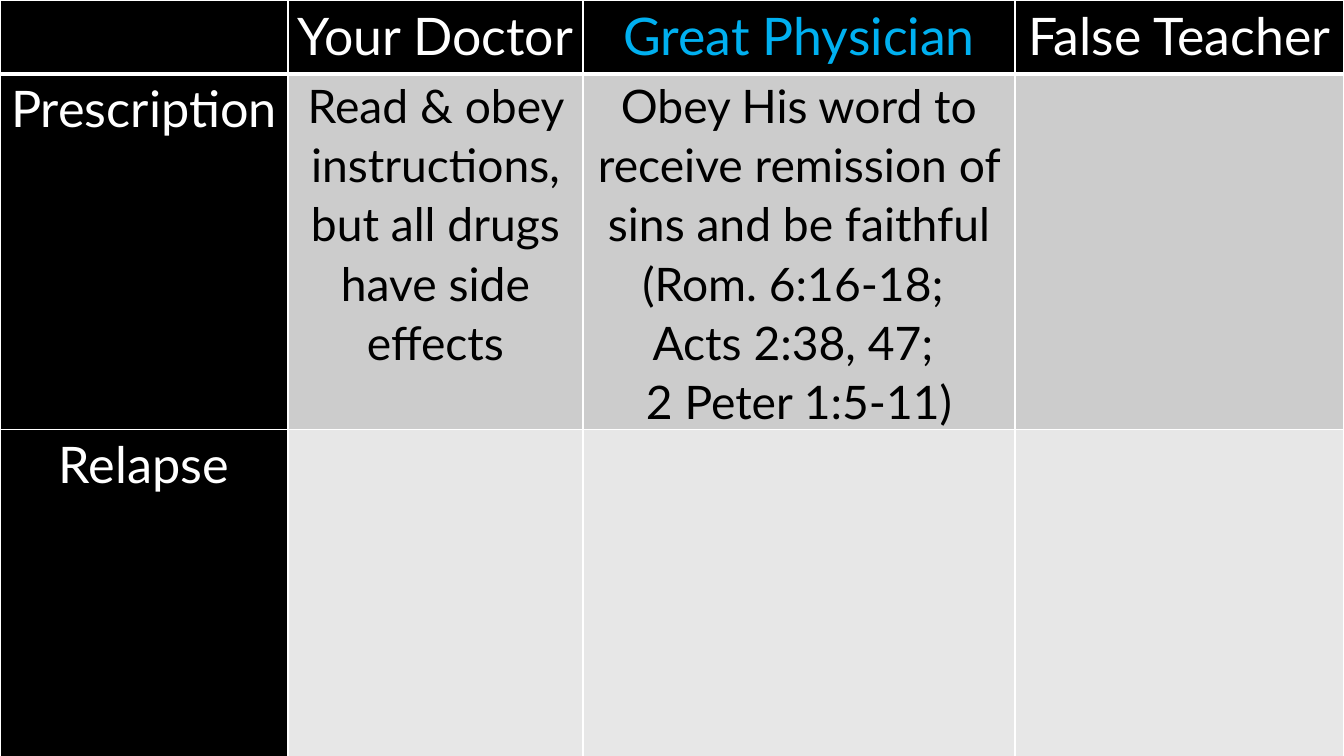
"""Build a slide comparing prescriptions and relapse across three kinds of healer."""
from lxml import etree
from pptx import Presentation
from pptx.dml.color import RGBColor
from pptx.enum.text import PP_ALIGN
from pptx.oxml.ns import qn
from pptx.util import Pt

CENTER = PP_ALIGN.CENTER
EMU_PER_PX = 914400 / 100.8
COLORS = {
    "black": "000000",
    "white": "FFFFFF",
    "blue": "00B0F0",
    "gray": "CCCCCC",
    "light": "E7E7E7",
}
COLUMN_WIDTHS = [288, 295, 432, 329]
ROW_HEIGHTS = [74, 355, 328]
ROW_FILLS = ["black", "gray", "light"]
ENTRIES = {
    (0, 1): (["Your Doctor"], 37, "white"),
    (0, 2): (["Great Physician"], 37, "blue"),
    (0, 3): (["False Teacher"], 37, "white"),
    (1, 0): (["Prescription"], 36, "white"),
    (1, 1): (["Read & obey instructions, but all drugs have side effects"], 33, "black"),
    (1, 2): ([
        "Obey His word to receive remission of sins and be faithful (Rom. 6:16-18; ",
        "Acts 2:38, 47; ",
        "2 Peter 1:5-11)",
    ], 33, "black"),
    (2, 0): (["Relapse"], 36, "white"),
}


def px(length):
    return round(length * EMU_PER_PX)


def add_border(cell, side, points):
    line = etree.SubElement(cell._tc.get_or_add_tcPr(), qn(f"a:{side}"), w=str(Pt(points)))
    solid = etree.SubElement(line, qn("a:solidFill"))
    etree.SubElement(solid, qn("a:srgbClr"), val=COLORS["white"])


prs = Presentation()
prs.slide_width = px(1344)
prs.slide_height = px(756)
slide = prs.slides.add_slide(prs.slide_layouts[6])
slide.background.fill.solid()
slide.background.fill.fore_color.rgb = RGBColor.from_string(COLORS["black"])

comparison = slide.shapes.add_table(
    len(ROW_HEIGHTS), len(COLUMN_WIDTHS), 0, 0,
    px(sum(COLUMN_WIDTHS)), px(sum(ROW_HEIGHTS)),
).table
comparison.first_row = False
comparison.horz_banding = False
for column, width in zip(comparison.columns, COLUMN_WIDTHS):
    column.width = px(width)
for row, height in zip(comparison.rows, ROW_HEIGHTS):
    row.height = px(height)

for r, row_fill in enumerate(ROW_FILLS):
    for c in range(len(COLUMN_WIDTHS)):
        cell = comparison.cell(r, c)
        cell.margin_left = cell.margin_right = px(7)
        cell.margin_top = cell.margin_bottom = 0
        add_border(cell, "lnL", 1)
        add_border(cell, "lnR", 1)
        add_border(cell, "lnT", 3 if r == 1 else 1)
        add_border(cell, "lnB", 3 if r == 0 else 1)
        cell.fill.solid()
        cell.fill.fore_color.rgb = RGBColor.from_string(COLORS["black" if c == 0 else row_fill])

for (r, c), (paragraphs, size, color) in ENTRIES.items():
    frame = comparison.cell(r, c).text_frame
    for i, text in enumerate(paragraphs):
        paragraph = frame.add_paragraph() if i else frame.paragraphs[0]
        paragraph.alignment = CENTER
        paragraph.line_spacing = 1.07
        run = paragraph.add_run()
        run.text = text
        run.font.name = "Lato"
        run.font.size = Pt(size)
        run.font.color.rgb = RGBColor.from_string(COLORS[color])

prs.save("out.pptx")
